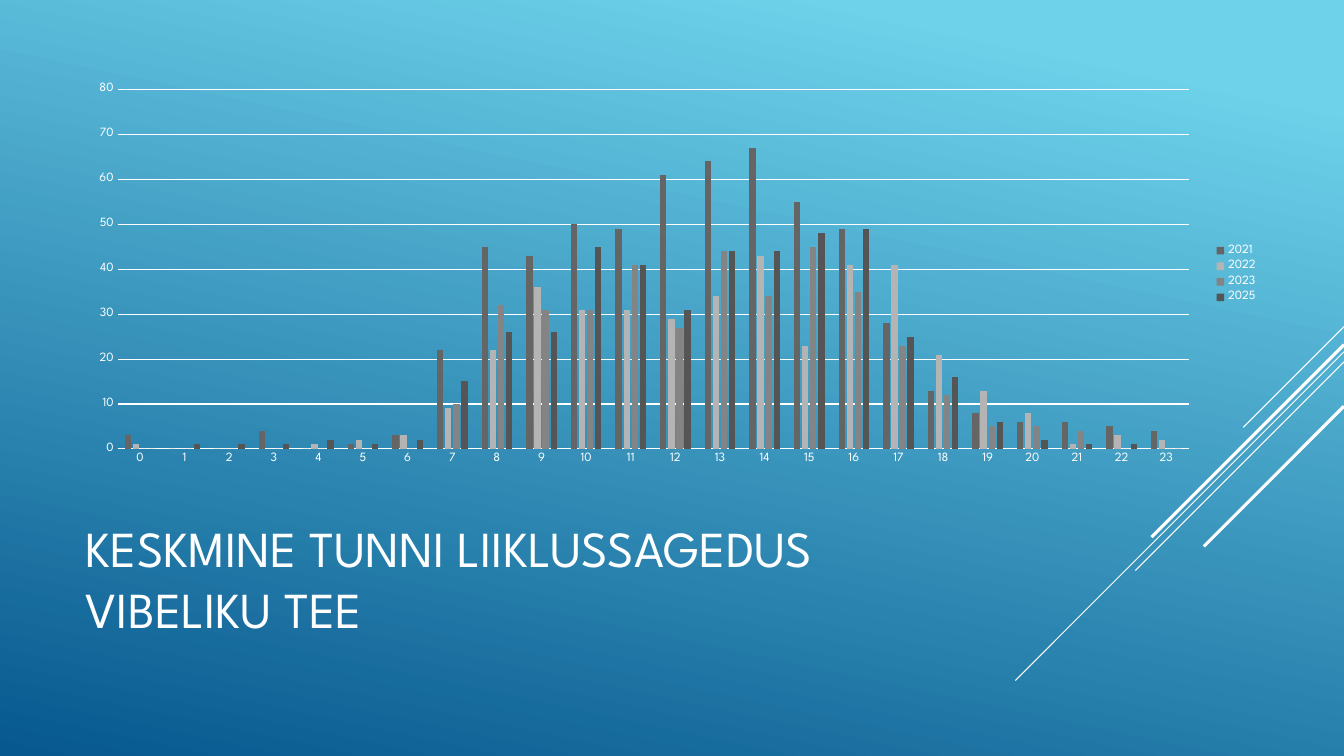
import pptx
import pptx.chart.data
import pptx.dml.color
import pptx.enum.chart
import pptx.enum.shapes
import pptx.enum.text
import pptx.oxml.ns
import pptx.util
from lxml import etree

Pt = pptx.util.Pt
FONT = "League Spartan"
WHITE = "FFFFFF"

TRAFFIC = {
    "2021": ("656565", [3, 0, 0, 4, 0, 1, 3, 22, 45, 43, 50, 49,
                        61, 64, 67, 55, 49, 28, 13, 8, 6, 6, 5, 4]),
    "2022": ("B4B4B4", [1, 0, 0, 0, 1, 2, 3, 9, 22, 36, 31, 31,
                        29, 34, 43, 23, 41, 41, 21, 13, 8, 1, 3, 2]),
    "2023": ("848484", [0, 0, 0, 0, 0, 0, 0, 10, 32, 31, 31, 41,
                        27, 44, 34, 45, 35, 23, 12, 5, 5, 4, 0, 0]),
    "2025": ("555555", [0, 1, 1, 1, 2, 1, 2, 15, 26, 26, 45, 41,
                        31, 44, 44, 48, 49, 25, 16, 6, 2, 1, 1, 0]),
}

# Diagonals start at the right edge: top, horizontal run, line width
DIAGONALS = [
    (233.3, 72, 0.75),
    (251.3, 234.7, 0.75),
    (258.5, 149, 0.75),
    (246.2, 137.5, 2.25),
    (290.2, 100.1, 2.25),
]


def color(value):
    return pptx.dml.color.RGBColor.from_string(value)


def style_font(font, size):
    font.name = FONT
    font.size = Pt(size)
    font.color.rgb = color(WHITE)


def style_line(line, width=0.75):
    line.color.rgb = color(WHITE)
    line.width = Pt(width)


def paint_background(page):
    fill = page.background.fill
    fill.gradient()
    fill.gradient_angle = 258
    for stop, (position, shade) in zip(fill.gradient_stops,
                                       [(0.1, "6ED2EB"), (1, "06588E")]):
        stop.position = position
        stop.color.rgb = color(shade)


def add_diagonal(page, right, top, run, width):
    line = page.shapes.add_connector(
        pptx.enum.shapes.MSO_CONNECTOR.STRAIGHT,
        Pt(right), Pt(top), Pt(right - run), Pt(top + run))
    style_line(line.line, width)
    etree.SubElement(line._element.spPr, pptx.oxml.ns.qn("a:effectLst"))


def fill_title(page, text):
    title = page.shapes.title
    title.left, title.top, title.width, title.height = (
        Pt(54), Pt(353.5), Pt(672), Pt(118.8))
    frame = title.text_frame
    frame.word_wrap = True
    frame.auto_size = pptx.enum.text.MSO_AUTO_SIZE.NONE
    frame.vertical_anchor = pptx.enum.text.MSO_ANCHOR.MIDDLE
    para = frame.paragraphs[0]
    para.text = text
    para.alignment = pptx.enum.text.PP_ALIGN.LEFT
    for span in para.runs:
        style_font(span.font, 36)


def add_traffic_chart(page):
    data = pptx.chart.data.CategoryChartData()
    data.categories = [str(hour) for hour in range(24)]
    for year, (_, counts) in TRAFFIC.items():
        data.add_series(year, counts)
    chart = page.shapes.add_chart(
        pptx.enum.chart.XL_CHART_TYPE.COLUMN_CLUSTERED,
        Pt(54), Pt(54), Pt(852), Pt(283.5), data).chart
    chart.has_title = False
    style_font(chart.font, 10)

    # Columns
    plot = chart.plots[0]
    plot.vary_by_categories = False
    plot.gap_width = 219
    plot.overlap = -27
    for series, (shade, _) in zip(plot.series, TRAFFIC.values()):
        series.format.fill.solid()
        series.format.fill.fore_color.rgb = color(shade)

    # Axes
    for axis in (chart.category_axis, chart.value_axis):
        axis.major_tick_mark = pptx.enum.chart.XL_TICK_MARK.NONE
        axis.minor_tick_mark = pptx.enum.chart.XL_TICK_MARK.NONE
        style_font(axis.tick_labels.font, 9)
    style_line(chart.category_axis.format.line)
    counts_axis = chart.value_axis
    counts_axis.minimum_scale = 0
    counts_axis.maximum_scale = 80
    counts_axis.major_unit = 10
    counts_axis.format.line.fill.background()
    style_line(counts_axis.major_gridlines.format.line)

    # Legend
    chart.has_legend = True
    chart.legend.position = pptx.enum.chart.XL_LEGEND_POSITION.RIGHT
    chart.legend.include_in_layout = False
    style_font(chart.legend.font, 9)


def main():
    deck = pptx.Presentation()
    deck.slide_width, deck.slide_height = Pt(960), Pt(540)
    page = deck.slides.add_slide(deck.slide_layouts[5])
    paint_background(page)
    for top, run, width in DIAGONALS:
        add_diagonal(page, 960, top, run, width)
    fill_title(page, "KESKMINE TUNNI LIIKLUSSAGEDUS\vVIBELIKU TEE")
    add_traffic_chart(page)
    deck.save("out.pptx")


if __name__ == "__main__":
    main()
